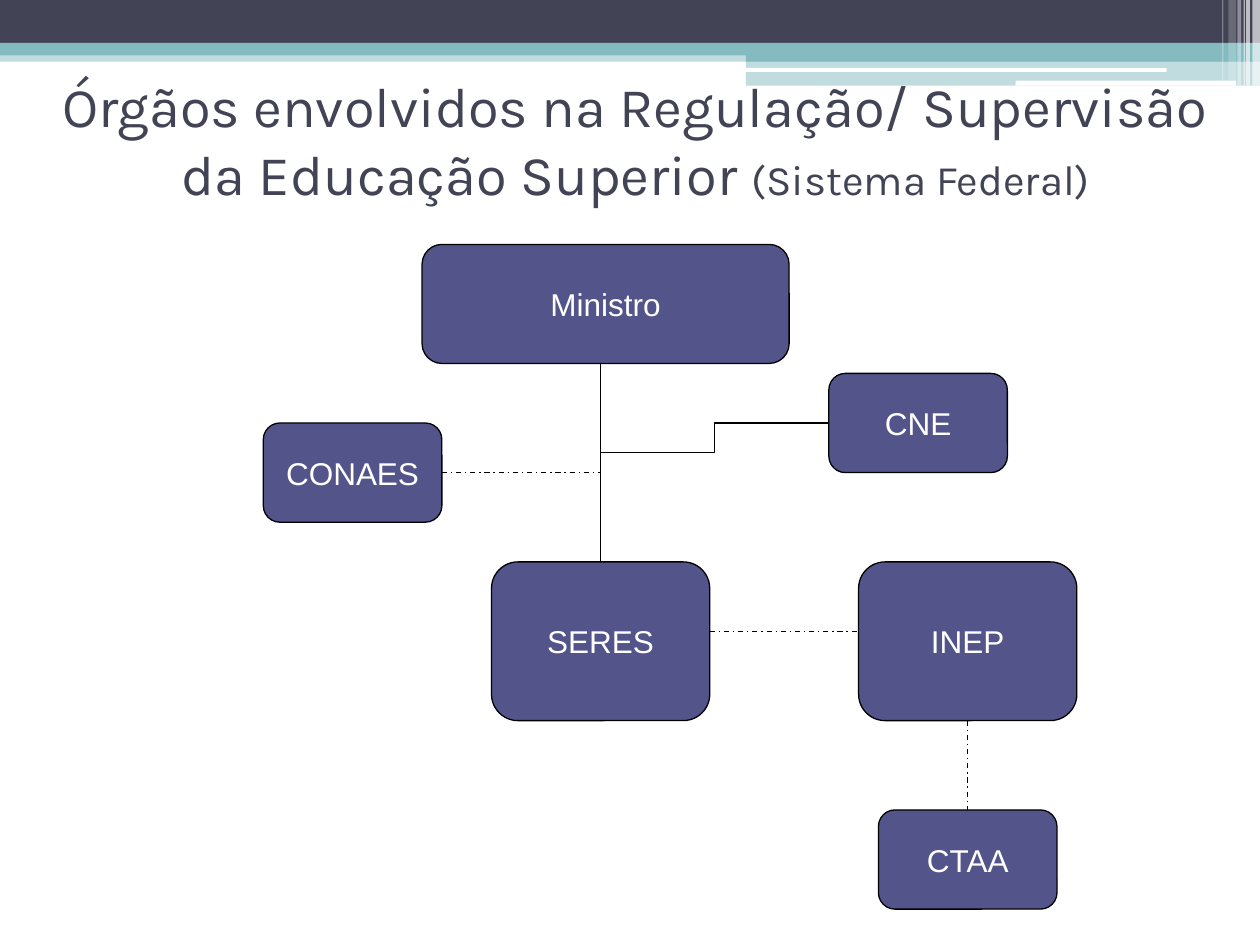
import dataclasses

import pptx
import pptx.dml.color
import pptx.enum.dml
import pptx.enum.shapes
import pptx.enum.text
import pptx.oxml.ns
import pptx.util
from lxml import etree

SHAPE = pptx.enum.shapes.MSO_SHAPE
CONNECTOR = pptx.enum.shapes.MSO_CONNECTOR
TOP, LEFT, BOTTOM, RIGHT = range(4)


@dataclasses.dataclass(frozen=True)
class Theme:
    dark: str = "424456"
    teal: str = "83BBC1"
    white: str = "FFFFFF"
    node: str = "53548A"
    line: str = "000000"
    title_font: str = "Karla"
    node_font: str = "Arial"
    title_size: int = 32
    subtitle_size: int = 24
    node_size: int = 18
    line_width: float = 0.75


THEME = Theme()
WIDTH, HEIGHT = pptx.util.Inches(10), pptx.util.Inches(7.5)
CELL = pptx.util.Cm(0.2)
GRID_LEFT, GRID_TOP = pptx.util.Inches(2.09), pptx.util.Inches(1.94)

# left, top, width, height in percent of the slide; colour; opacity
BANNER = [
    (0, 5.33, 100, 1.2, THEME.teal, 50),
    (0, 0, 100, 4.53, THEME.dark, 100),
    (0, 4.53, 100, 1.33, THEME.teal, 100),
    (59.2, 5.2, 40.8, 1.33, THEME.teal, 100),
    (59.2, 6.4, 40.8, 2.67, THEME.teal, 50),
]
PILLS = [(59.1, 7.2, 33.5, 0.4), (80.6, 8.53, 17.5, 0.53)]
# left, width, height, opacity
STRIPES = [
    (99.4, 0.6, 9.07, 65),
    (98.9, 0.3, 9.07, 65),
    (98.7, 0.1, 9.07, 60),
    (98.2, 0.3, 9.07, 40),
    (97.5, 0.6, 8.53, 20),
    (97, 0.1, 8.53, 30),
]
# column, row, columns, rows
NODES = {
    "Ministro": (16, 0, 37, 12),
    "SERES": (23, 32, 22, 16),
    "INEP": (60, 32, 22, 16),
    "CNE": (57, 13, 18, 10),
    "CONAES": (0, 18, 18, 10),
    "CTAA": (62, 57, 18, 10),
}


def rgb(color):
    return pptx.dml.color.RGBColor.from_string(color)


def share(left, top, width, height):
    return [round(part * size / 100) for part, size in
            ((left, WIDTH), (top, HEIGHT), (width, WIDTH), (height, HEIGHT))]


def grid_point(column, row):
    return GRID_LEFT + column * CELL, GRID_TOP + row * CELL


def add_filled(page, kind, bounds, color, opacity=100):
    shape = page.shapes.add_shape(kind, *bounds)
    shape.shadow.inherit = False
    shape.fill.solid()
    shape.fill.fore_color.rgb = rgb(color)
    shape.line.fill.background()
    if opacity < 100:
        tint = shape.fill._xPr.find(".//" + pptx.oxml.ns.qn("a:srgbClr"))
        alpha = etree.SubElement(tint, pptx.oxml.ns.qn("a:alpha"))
        alpha.set("val", str(opacity * 1000))
    return shape


def add_text(para, text, *, size, font, color):
    para.alignment = pptx.enum.text.PP_ALIGN.CENTER
    span = para.add_run()
    span.text = text
    span.font.size = pptx.util.Pt(size)
    span.font.name = font
    span.font.color.rgb = rgb(color)


def style_line(line):
    line.color.rgb = rgb(THEME.line)
    line.width = pptx.util.Pt(THEME.line_width)


def add_banner(page):
    for *bounds, color, opacity in BANNER:
        add_filled(page, SHAPE.RECTANGLE, share(*bounds), color, opacity)
    for bounds in PILLS:
        add_filled(page, SHAPE.ROUNDED_RECTANGLE, share(*bounds), THEME.white)
    for left, width, height, opacity in STRIPES:
        add_filled(page, SHAPE.RECTANGLE, share(left, 0, width, height), THEME.white, opacity)


def add_title(page):
    frame = page.shapes.add_textbox(*share(2, 6.93, 96.9, 15.6)).text_frame
    frame.word_wrap = True
    frame.vertical_anchor = pptx.enum.text.MSO_ANCHOR.MIDDLE
    look = {"font": THEME.title_font, "color": THEME.dark}
    para = frame.paragraphs[0]
    add_text(para, "Órgãos envolvidos na Regulação/ Supervisão da Educação Superior ",
             size=THEME.title_size, **look)
    add_text(para, "(Sistema Federal)", size=THEME.subtitle_size, **look)


def add_node(page, label, column, row, columns, rows):
    bounds = (*grid_point(column, row), columns * CELL, rows * CELL)
    box = add_filled(page, SHAPE.ROUNDED_RECTANGLE, bounds, THEME.node)
    style_line(box.line)
    frame = box.text_frame
    frame.word_wrap = False
    frame.vertical_anchor = pptx.enum.text.MSO_ANCHOR.MIDDLE
    add_text(frame.paragraphs[0], label, size=THEME.node_size,
             font=THEME.node_font, color=THEME.white)
    return box


def add_link(page, start, end, *, kind=CONNECTOR.STRAIGHT, dashed=False,
             begin_at=None, end_at=None):
    link = page.shapes.add_connector(kind, *grid_point(*start), *grid_point(*end))
    style_line(link.line)
    if dashed:
        link.line.dash_style = pptx.enum.dml.MSO_LINE.DASH_DOT
    etree.SubElement(link._element.spPr, pptx.oxml.ns.qn("a:effectLst"))
    if begin_at:
        link.begin_connect(*begin_at)
    if end_at:
        link.end_connect(*end_at)


def add_chart_of_bodies(page):
    boxes = {label: add_node(page, label, *cells) for label, cells in NODES.items()}
    add_link(page, (34, 12), (34, 32), end_at=(boxes["SERES"], TOP))
    add_link(page, (18, 23), (34, 23), dashed=True, begin_at=(boxes["CONAES"], RIGHT))
    add_link(page, (45, 39), (60, 39), dashed=True)
    add_link(page, (34, 21), (57, 18), kind=CONNECTOR.ELBOW)
    add_link(page, (71, 48), (71, 57), dashed=True,
             begin_at=(boxes["INEP"], BOTTOM), end_at=(boxes["CTAA"], TOP))


def main():
    deck = pptx.Presentation()
    deck.slide_width, deck.slide_height = WIDTH, HEIGHT
    page = deck.slides.add_slide(deck.slide_layouts[6])
    add_banner(page)
    add_title(page)
    add_chart_of_bodies(page)
    deck.save("out.pptx")


if __name__ == "__main__":
    main()
